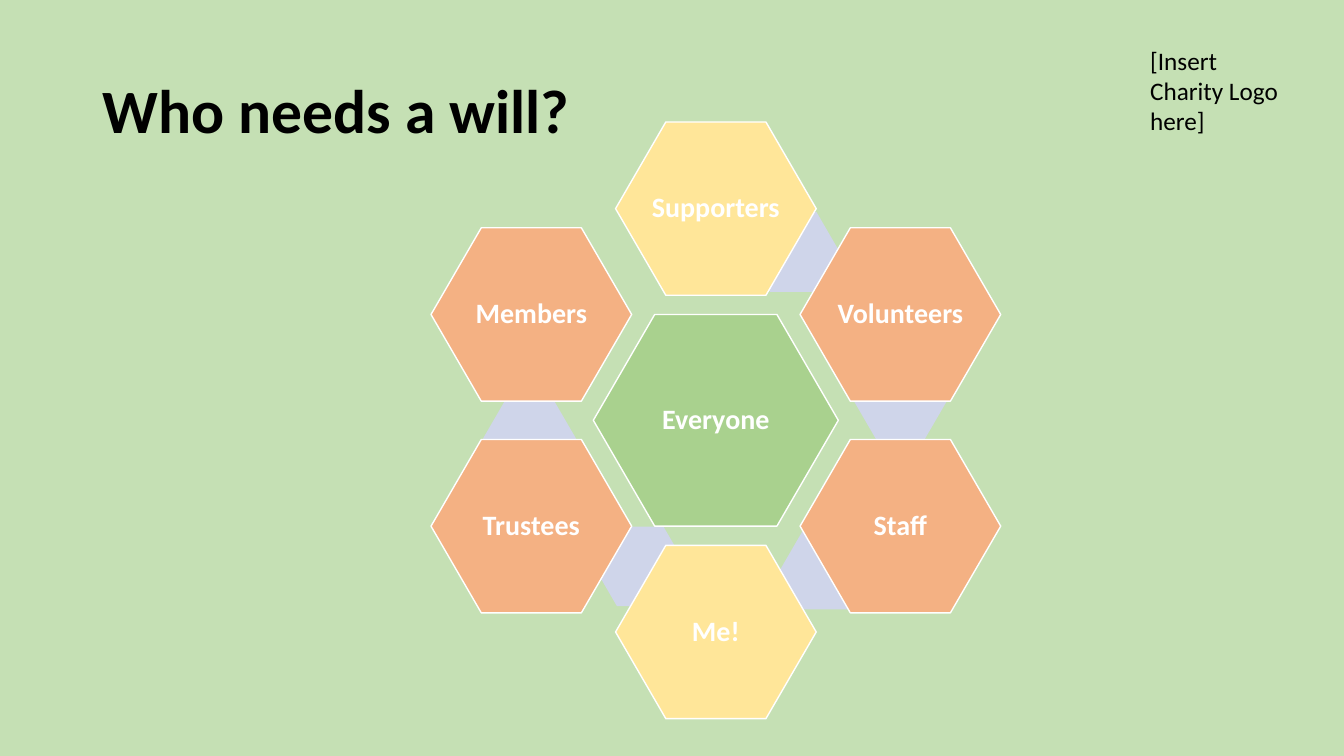
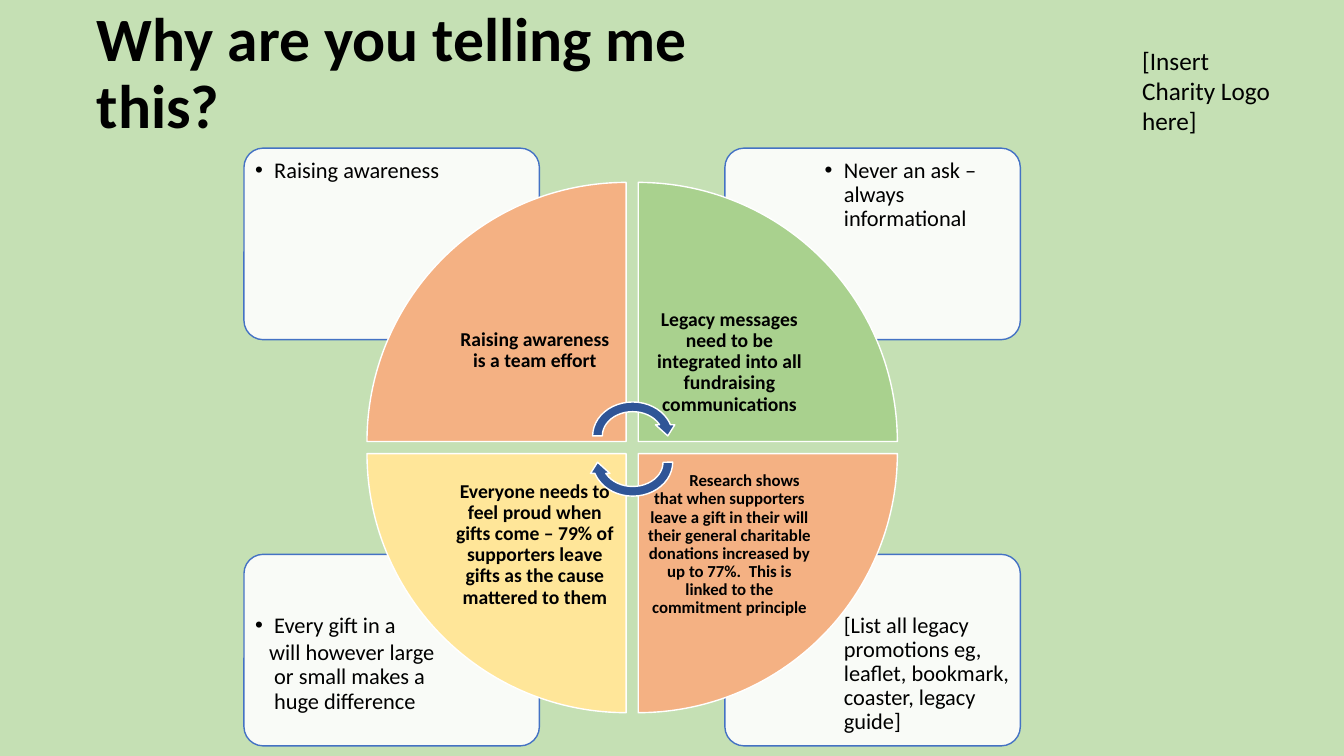
from lxml import etree
from pptx import Presentation
from pptx.dml.color import RGBColor
from pptx.enum.shapes import MSO_SHAPE
from pptx.enum.text import MSO_ANCHOR, PP_ALIGN
from pptx.oxml.ns import qn
from pptx.util import Inches, Pt

HEXAGON = MSO_SHAPE.HEXAGON
CARD = MSO_SHAPE.ROUNDED_RECTANGLE
WEDGE = MSO_SHAPE.PIE_WEDGE
ARROW = MSO_SHAPE.CIRCULAR_ARROW
LEFT, CENTER = PP_ALIGN.LEFT, PP_ALIGN.CENTER
TOP, MIDDLE = MSO_ANCHOR.TOP, MSO_ANCHOR.MIDDLE

MINT = RGBColor(0xC5, 0xE0, 0xB4)
GREEN = RGBColor(0xA9, 0xD1, 0x8E)
YELLOW = RGBColor(0xFF, 0xE6, 0x99)
ORANGE = RGBColor(0xF4, 0xB1, 0x83)
LILAC = RGBColor(0xCF, 0xD5, 0xEA)
BLUE = RGBColor(0x44, 0x72, 0xC4)
NAVY = RGBColor(0x2F, 0x55, 0x97)
WHITE = RGBColor(0xFF, 0xFF, 0xFF)
BLACK = RGBColor(0x00, 0x00, 0x00)
FONT = "Calibri"

HUB_X, HUB_Y = 7.1, 4.17
COL, ROW = 1.83, 1.05
HUB_SIZE, RING_SIZE, LINK_SIZE = (2.43, 2.1), (1.99, 1.72), (0.92, 0.79)
RING = [
    ("Supporters", 0, -2, YELLOW),
    ("Volunteers", 1, -1, ORANGE),
    ("Staff", 1, 1, ORANGE),
    ("Me!", 0, 2, YELLOW),
    ("Trustees", -1, 1, ORANGE),
    ("Members", -1, -1, ORANGE),
]
LINKS = [(0.42, -1.59), (1, -0.18), (0.6, 1.41), (-0.41, 1.38), (-1.01, 0.17)]

PIE_X, PIE_Y, PIE, STEP = 3.64, 1.81, 2.57, 2.69
PIE_TEXT = 1.81
CARD_X, CARD_Y, CARD_W, CARD_H = (2.42, 7.19), (1.47, 5.5), 2.93, 1.9
NOTE_X, NOTE_Y, NOTE_W, NOTE_H = (2.46, 8.11), (1.51, 6.02), 1.97, 1.34
HANG = -0.19

CARDS = [
    (1, 1, [("[List all legacy promotions eg, leaflet, bookmark, coaster, "
             "legacy guide]", False, 0)]),
    (0, 1, [("Every gift in a", True, HANG),
            ("will however large or small makes a huge difference",
             False, -0.05)]),
    (1, 0, [("Never an ask – always informational", True, HANG)]),
    (0, 0, [("Raising awareness", True, HANG)]),
]
WEDGES = [
    (0, 0, 0, ORANGE, 14, 0.11, 0, 0, "Raising awareness is a team effort"),
    (1, 0, 90, GREEN, 14, 0.09, 0.24, 0,
     "Legacy messages need to be integrated into all fundraising "
     "communications"),
    (1, 1, 180, ORANGE, 12, 0.09, 0, 0.3,
     "Research shows that when supporters leave a gift in their will their "
     "general charitable donations increased by up to 77%.  This is linked "
     "to the commitment principle"),
    (0, 1, 270, YELLOW, 14, 0.11, 0, 0,
     "Everyone needs to feel proud when gifts come – 79% of supporters leave "
     "gifts as the cause mattered to them"),
]


def place(left, top, width, height):
    return [Inches(n) for n in (left, top, width, height)]


def add_run(para, text, size, color=BLACK, bold=False):
    run = para.add_run()
    run.text = text
    font = run.font
    font.name, font.size, font.bold = FONT, Pt(size), bold
    font.color.rgb = color


def set_indent(para, first, left=0):
    props = para._p.get_or_add_pPr()
    props.set("marL", str(Inches(left)))
    props.set("indent", str(Inches(first)))
    return props


def add_title(slide, text, box):
    title = slide.shapes.title
    title.left, title.top, title.width, title.height = place(*box)
    frame = title.text_frame
    frame.word_wrap, frame.vertical_anchor = True, MIDDLE
    para = frame.paragraphs[0]
    para.alignment, para.line_spacing = LEFT, 0.9
    add_run(para, text, 44, bold=True)


def add_box(slide, box, inset=None, anchor=TOP, drop=0):
    frame = slide.shapes.add_textbox(*place(*box)).text_frame
    frame.word_wrap, frame.vertical_anchor = True, anchor
    if inset is not None:
        frame.margin_left = frame.margin_right = Inches(inset)
        frame.margin_bottom = Inches(inset)
        frame.margin_top = Inches(inset + drop)
    return frame


def add_form(slide, kind, box, fill, line=WHITE, turn=0):
    form = slide.shapes.add_shape(kind, *place(*box))
    form.shadow.inherit = False
    form.rotation = turn
    form.fill.solid()
    form.fill.fore_color.rgb = fill
    if line is None:
        form.line.fill.background()
    else:
        form.line.color.rgb = line
        form.line.width = Pt(1)
    return form


def add_hex(slide, col, row, size, fill, line=WHITE, label=None):
    width, height = size
    box = (HUB_X + col * COL - width / 2, HUB_Y + row * ROW - height / 2,
           width, height)
    form = add_form(slide, HEXAGON, box, fill, line)
    form.adjustments[0] = 0.29
    if label:
        frame = form.text_frame
        frame.word_wrap, frame.vertical_anchor = False, MIDDLE
        para = frame.paragraphs[0]
        para.alignment, para.line_spacing = CENTER, 0.9
        add_run(para, label, 20, WHITE, True)


def add_card(slide, col, row, notes):
    form = add_form(slide, CARD, (CARD_X[col], CARD_Y[row], CARD_W, CARD_H),
                    WHITE, BLUE)
    form.adjustments[0] = 0.1
    color = form.fill._xPr.find(qn("a:solidFill"))[0]
    etree.SubElement(color, qn("a:alpha"), val="90000")
    frame = add_box(slide, (NOTE_X[col], NOTE_Y[row], NOTE_W, NOTE_H), 0.07)
    for index, (text, dot, first) in enumerate(notes):
        para = frame.add_paragraph() if index else frame.paragraphs[0]
        para.line_spacing, para.space_after = 0.9, Pt(2.4)
        props = set_indent(para, first, -HANG)
        if dot:
            etree.SubElement(props, qn("a:buFont"), typeface="Arial")
            etree.SubElement(props, qn("a:buChar"), char="•")
        add_run(para, text, 16)


def add_wedge(slide, col, row, turn, fill, size, inset, drop, first, text):
    left, top = PIE_X + col * STEP, PIE_Y + row * STEP
    add_form(slide, WEDGE, (left, top, PIE, PIE), fill, turn=turn)
    shift = PIE - PIE_TEXT
    box = (left + (1 - col) * shift, top + (1 - row) * shift,
           PIE_TEXT, PIE_TEXT)
    frame = add_box(slide, box, inset, MIDDLE, drop)
    para = frame.paragraphs[0]
    para.alignment, para.line_spacing = CENTER, 0.9
    set_indent(para, first)
    add_run(para, text, size, bold=True)


def add_page(deck, title, box, logo):
    slide = deck.slides.add_slide(deck.slide_layouts[5])
    add_title(slide, title, box)
    frame = add_box(slide, logo)
    add_run(frame.paragraphs[0], "[Insert Charity Logo here]", 18)
    return slide


def add_needs(deck):
    slide = add_page(deck, "Who needs a will?", (0.92, 0.4, 4.97, 1.45),
                     (11.31, 0.4, 1.54, 1.62))
    for col, row in LINKS:
        add_hex(slide, col, row, LINK_SIZE, LILAC, None)
    add_hex(slide, 0, 0, HUB_SIZE, GREEN, label="Everyone")
    for label, col, row, fill in RING:
        add_hex(slide, col, row, RING_SIZE, fill, label=label)


def add_why(deck):
    slide = add_page(deck, "Why are you telling me this?",
                     (0.86, 0.02, 7.16, 1.45), (11.23, 0.4, 1.58, 1.62))
    for card in CARDS:
        add_card(slide, *card)
    for wedge in WEDGES:
        add_wedge(slide, *wedge)
    for top, turn in ((3.94, 0), (4.2, 180)):
        add_form(slide, ARROW, (5.83, top, 0.89, 0.77), NAVY, turn=turn)


def main():
    deck = Presentation()
    deck.slide_width, deck.slide_height = Inches(13.33), Inches(7.5)
    back = deck.slide_master.background.fill
    back.solid()
    back.fore_color.rgb = MINT
    add_needs(deck)
    add_why(deck)
    deck.save("out.pptx")


if __name__ == "__main__":
    main()
